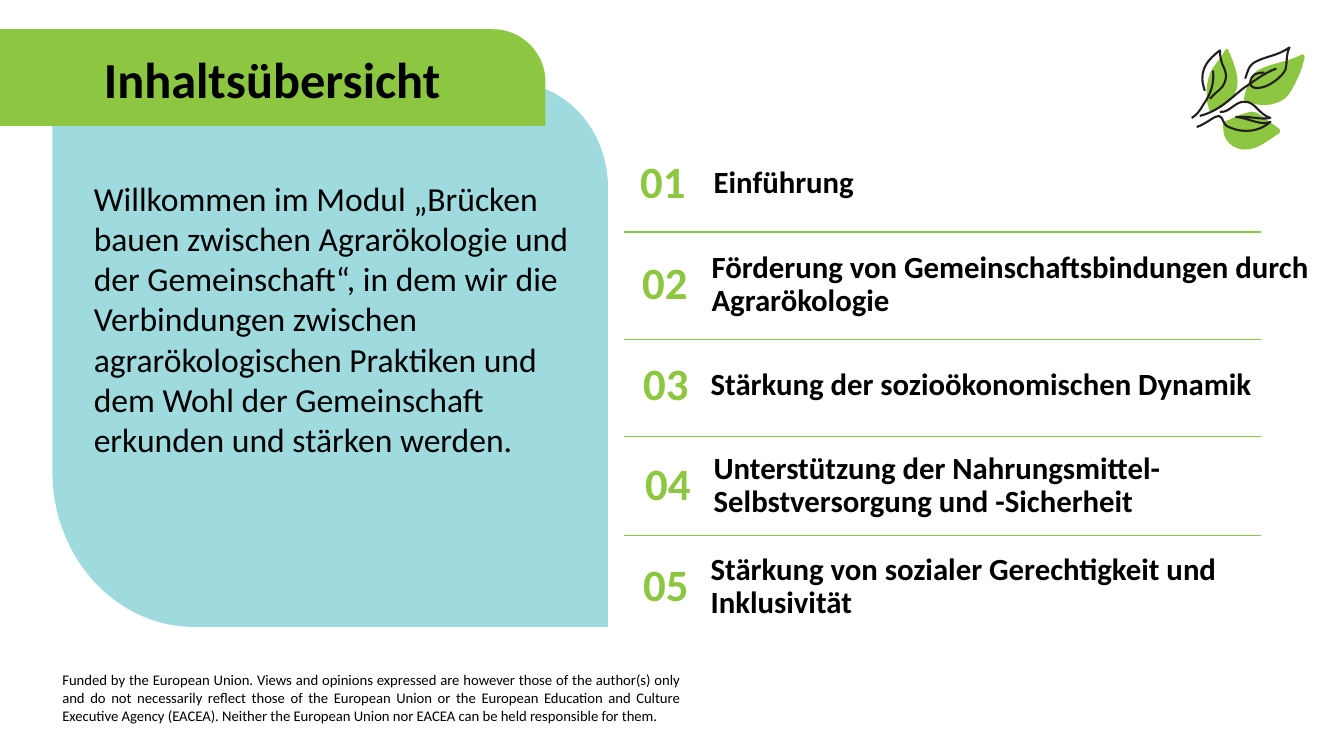
from collections import namedtuple
from dataclasses import dataclass

from lxml import etree
from pptx import Presentation
from pptx.dml.color import RGBColor
from pptx.enum.shapes import MSO_CONNECTOR
from pptx.enum.text import MSO_ANCHOR, MSO_AUTO_SIZE, PP_ALIGN
from pptx.oxml.ns import qn
from pptx.util import Inches, Pt

Box = namedtuple("Box", "left top width height")
Topic = namedtuple("Topic", "text number_left left width")


@dataclass(frozen=True)
class Theme:
    font: str = "Calibri"
    text: str = "000000"
    green: str = "8DC641"
    panel: str = "9FDADF"
    ink: str = "231F20"
    title_size: float = 36
    number_size: float = 32
    welcome_size: float = 24
    topic_size: float = 22
    notice_size: float = 10.5
    ink_width: float = 1.5
    divider_width: float = 1


THEME = Theme()
SLIDE = Box(0, 0, 13.33, 7.5)

TITLE = "Inhaltsübersicht"
WELCOME = (
    "Willkommen im Modul „Brücken bauen zwischen Agrarökologie und der "
    "Gemeinschaft“, in dem wir die Verbindungen zwischen agrarökologischen "
    "Praktiken und dem Wohl der Gemeinschaft erkunden und stärken werden."
)
TOPICS = [
    Topic("Einführung", 0, 0.79, 4.88),
    Topic("Förderung von Gemeinschaftsbindungen durch Agrarökologie", 0.02, 0.77, 6.37),
    Topic("Stärkung der sozioökonomischen Dynamik", 0.03, 0.76, 5.71),
    Topic("Unterstützung der Nahrungsmittel-Selbstversorgung und -Sicherheit",
          0.05, 0.79, 5.98),
    Topic("Stärkung von sozialer Gerechtigkeit und Inklusivität", 0.03, 0.76, 5.98),
]
NOTICE = (
    "Funded by the European Union. Views and opinions expressed are however "
    "those of the author(s) only and do not necessarily reflect those of the "
    "European Union or the European Education and Culture Executive Agency "
    "(EACEA). Neither the European Union nor EACEA can be held responsible for them."
)

# Outlines: a start point, then straight (x, y) or cubic (x1, y1, x2, y2, x, y) steps,
# in inches from the corner of the box.
PANEL_OUTLINE = [(5.51, 5.4), (1.41, 5.4), (0.63, 5.4, 0, 4.71, 0, 3.86), (0, 0),
                 (4.56, 0), (5.09, 0, 5.51, 0.47, 5.51, 1.04)]
BANNER_OUTLINE = [(0, 0), (4.89, 0), (5.18, 0, 5.41, 0.24, 5.41, 0.52),
                  (5.41, 0.96), (0, 0.96)]
LEAVES = [
    [(.25, .7), (.35, .65, .45, .57, .47, .46), (.49, .34, .43, .21, .38, .09),
     (.38, .08, .35, .08, .35, .1), (.32, .16, .28, .2, .24, .26),
     (.21, .3, .19, .35, .18, .4), (.16, .49, .16, .59, .19, .68),
     (.2, .72, .22, .71, .25, .7)],
    [(.94, .58), (1, .53, 1.03, .46, 1.06, .4), (1.1, .32, 1.12, .25, 1.14, .17),
     (1.14, .15, 1.13, .13, 1.11, .14), (1.04, .18, .97, .2, .89, .22),
     (.83, .24, .77, .25, .71, .28), (.66, .3, .62, .34, .6, .39),
     (.57, .45, .55, .51, .54, .57), (.53, .59, .54, .6, .55, .6),
     (.68, .66, .83, .66, .94, .58)],
    [(.89, .92), (.9, .91, .9, .89, .89, .88), (.84, .84, .79, .81, .74, .77),
     (.7, .74, .67, .71, .62, .71), (.58, .71, .54, .73, .5, .74),
     (.46, .76, .42, .77, .39, .79), (.35, .8, .32, .82, .33, .85),
     (.33, .88, .34, .92, .34, .94), (.36, 1, .41, 1.05, .47, 1.07),
     (.62, 1.13, .77, 1, .89, .92)],
]
LEAF_STROKES = [
    [(.15, .5), (.09, .33, .14, .22, .3, .1), (.3, .16, .31, .19, .32, .23),
     (.34, .27, .36, .31, .36, .36), (.35, .45, .31, .48, .26, .52),
     (.24, .54, .22, .56, .2, .58)],
    [(.23, .3), (.25, .42, .2, .55, .14, .63), (.1, .7, .07, .74, .02, .77)],
    [(.55, .38), (.58, .3, .58, .24, .68, .2), (.76, .16, .88, .15, .99, .07),
     (.95, .15, .97, .22, .95, .29), (.92, .36, .79, .46, .7, .47),
     (.65, .48, .6, .47, .6, .42), (.61, .33, .67, .32, .74, .32)],
    [(.86, .28), (.74, .32, .62, .42, .54, .47), (.42, .56, .3, .7, .1, .75)],
    [(.07, .86), (.18, .82, .24, .75, .29, .75), (.34, .76, .32, .84, .39, .86),
     (.54, .93, .7, .9, .8, .81), (.7, .85, .58, .77, .46, .76),
     (.6, .75, .7, .79, .8, .77), (.68, .73, .65, .61, .55, .61),
     (.45, .6, .4, .72, .3, .71)],
]


def add_outline(slide, box, outlines, fill=None, ink=None):
    """Draw the outlines as one shape, whose six-number steps are cubic curves."""
    def place(point):
        return Inches(box.left + point[0]), Inches(box.top + point[1])

    builder = slide.shapes.build_freeform(*place(outlines[0][0]), scale=1.0)
    for index, outline in enumerate(outlines):
        if index:
            builder.move_to(*place(outline[0]))
        builder.add_line_segments([place(step[-2:]) for step in outline[1:]],
                                  close=fill is not None)
    shape = builder.convert_to_shape()
    steps = [step for outline in outlines for step in outline[1:]]
    for segment, step in zip(list(shape._element.iter(qn("a:lnTo"))), steps):
        if len(step) == 6:
            curve = etree.Element(qn("a:cubicBezTo"))
            for knot in (step[:2], step[2:4], step[4:]):
                x, y = place(knot)
                etree.SubElement(curve, qn("a:pt"), x=str(x - shape.left),
                                 y=str(y - shape.top))
            segment.getparent().replace(segment, curve)
    shape.shadow.inherit = False
    if fill:
        shape.fill.solid()
        shape.fill.fore_color.rgb = RGBColor.from_string(fill)
    else:
        shape.fill.background()
    if ink:
        shape.line.color.rgb = RGBColor.from_string(ink)
        shape.line.width = Pt(THEME.ink_width)
    else:
        shape.line.fill.background()


def put_text(shape, box, text, size, bold=False, color=THEME.text, spacing=None,
             align=PP_ALIGN.LEFT, anchor=MSO_ANCHOR.MIDDLE):
    for side, length in box._asdict().items():
        setattr(shape, side, Inches(length))
    frame = shape.text_frame
    frame.text = text
    for name, value in {"word_wrap": True, "auto_size": MSO_AUTO_SIZE.NONE,
                        "vertical_anchor": anchor}.items():
        setattr(frame, name, value)
    paragraph = frame.paragraphs[0]
    for name, value in {"alignment": align, "line_spacing": spacing,
                        "space_before": Pt(0)}.items():
        setattr(paragraph, name, value)
    font = paragraph.runs[0].font
    for name, value in {"name": THEME.font, "size": Pt(size), "bold": bold}.items():
        setattr(font, name, value)
    font.color.rgb = RGBColor.from_string(color)
    return paragraph


def add_text(slide, box, text, size, **formats):
    put_text(slide.shapes.add_textbox(0, 0, 0, 0), box, text, size, **formats)


def bring_to_front(shape):
    shape._element.getparent().append(shape._element)


def add_welcome(slide, box):
    add_outline(slide, box, [PANEL_OUTLINE], fill=THEME.panel)
    welcome = slide.placeholders[1]
    text_box = Box(box.left + 0.06, box.top + 0.89, 5.16, 4.68)
    paragraph = put_text(welcome, text_box, WELCOME, THEME.welcome_size,
                         anchor=MSO_ANCHOR.TOP)
    properties = paragraph._p.get_or_add_pPr()
    properties.set("marL", str(Inches(0.25)))
    properties.set("indent", "0")
    etree.SubElement(properties, qn("a:buNone"))
    bring_to_front(welcome)


def add_banner(slide, box):
    add_outline(slide, box, [BANNER_OUTLINE], fill=THEME.green)
    title = slide.shapes.title
    put_text(title, Box(box.left + 0.93, box.top + 0.13, 5.51, 0.79), TITLE,
             THEME.title_size, bold=True, spacing=0.9)
    bring_to_front(title)


def add_divider(slide, left, right, y):
    divider = slide.shapes.add_connector(
        MSO_CONNECTOR.STRAIGHT, *map(Inches, (right, y, left, y)))
    divider.line.color.rgb = RGBColor.from_string(THEME.green)
    divider.line.width = Pt(THEME.divider_width)
    etree.SubElement(divider._element.spPr, qn("a:effectLst"))


def add_agenda(slide, box):
    """Numbered topics in equal rows, with a divider between each two."""
    row, number_width, text_height = box.height / len(TOPICS), 0.77, 0.75
    for offset in (0.85, 1.92, 2.88, 3.86):
        add_divider(slide, box.left, box.left + 6.32, box.top + offset)
    for index, topic in enumerate(TOPICS):
        top = box.top + index * row
        add_text(slide, Box(box.left + topic.number_left, top, number_width, text_height),
                 f"{index + 1:02}", THEME.number_size, bold=True, color=THEME.green,
                 spacing=0.9, align=PP_ALIGN.CENTER)
        add_text(slide, Box(box.left + topic.left, top, topic.width, text_height),
                 topic.text, THEME.topic_size, bold=True, spacing=0.9)


def add_leaves(slide, box):
    for leaf in LEAVES:
        add_outline(slide, box, [leaf], fill=THEME.green)
    add_outline(slide, box, LEAF_STROKES, ink=THEME.ink)


def main():
    deck = Presentation()
    deck.slide_width, deck.slide_height = Inches(SLIDE.width), Inches(SLIDE.height)
    slide = deck.slides.add_slide(deck.slide_layouts[1])
    add_welcome(slide, Box(0.52, 0.82, 5.51, 5.4))
    add_banner(slide, Box(0, 0.29, 5.41, 0.96))
    add_agenda(slide, Box(6.19, 1.45, SLIDE.width - 6.19, 5))
    add_text(slide, Box(0.52, 6.61, 6.33, 0.66), NOTICE, THEME.notice_size,
             align=PP_ALIGN.JUSTIFY, anchor=MSO_ANCHOR.TOP)
    add_leaves(slide, Box(11.8, 0.4, 1.14, 1.1))
    deck.save("out.pptx")


if __name__ == "__main__":
    main()
